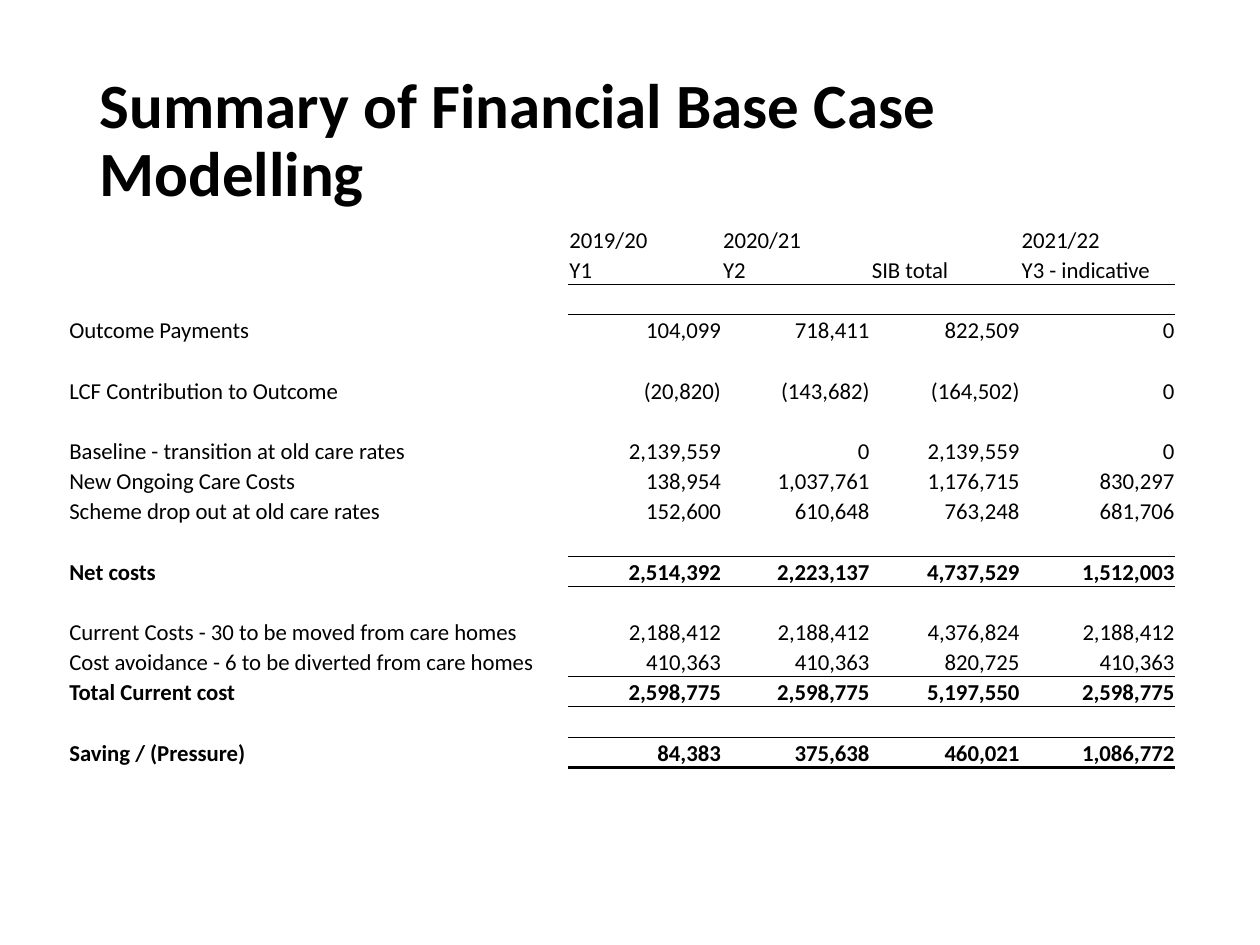
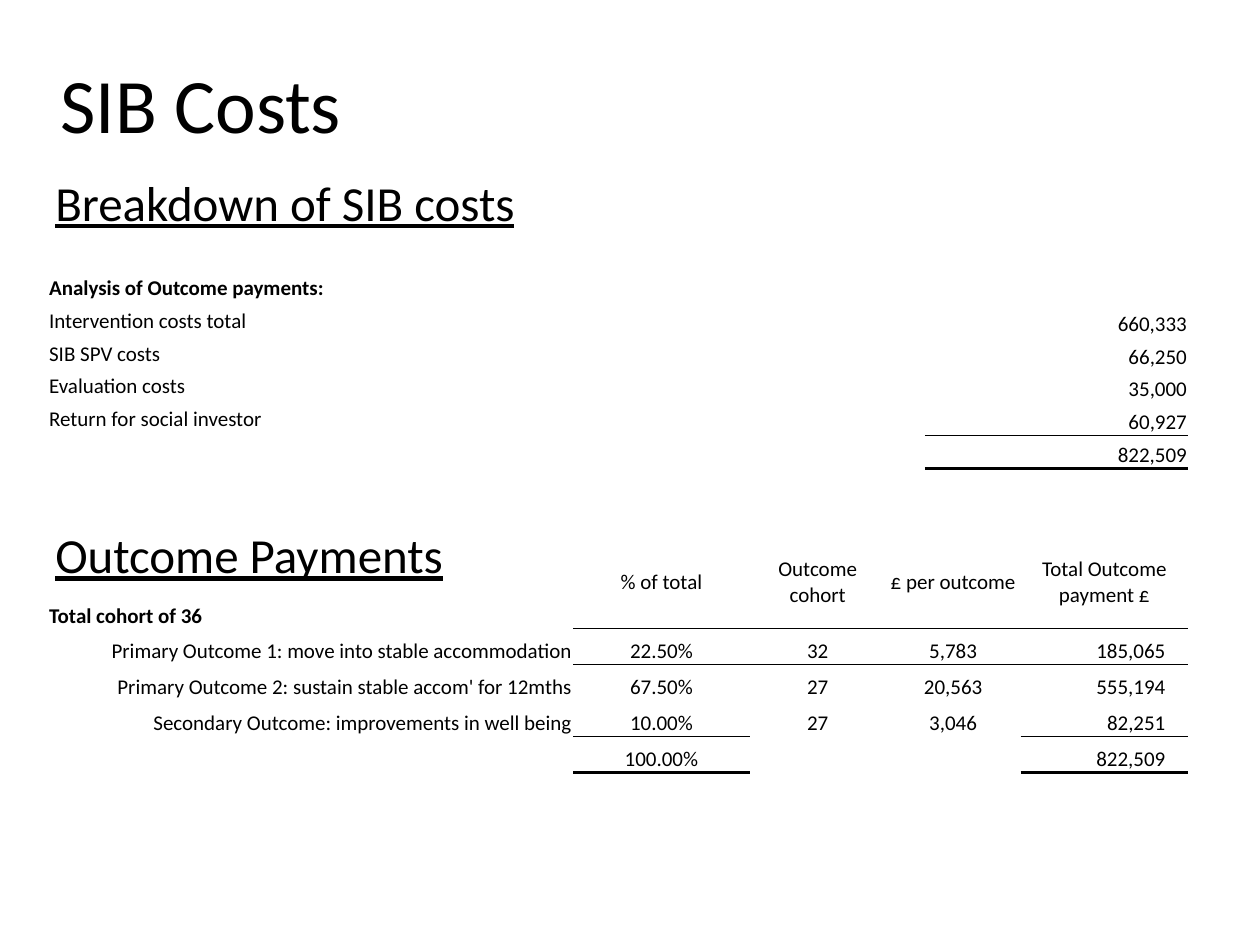
from lxml import etree
from pptx import Presentation
from pptx.dml.color import RGBColor
from pptx.enum.text import MSO_ANCHOR, MSO_AUTO_SIZE, PP_ALIGN
from pptx.oxml.ns import qn
from pptx.util import Inches, Pt

LEFT, CENTRE, RIGHT = PP_ALIGN.LEFT, PP_ALIGN.CENTER, PP_ALIGN.RIGHT
MIDDLE, BOTTOM = MSO_ANCHOR.MIDDLE, MSO_ANCHOR.BOTTOM
NO_AUTOFIT = MSO_AUTO_SIZE.NONE
TITLE_ONLY = 5

COLOURS = {"paper": "FFFFFF", "ink": "000000"}
FONT = "Calibri"
PLAIN_TABLE = "{2D5ABB26-0587-4C30-8999-92F81FD0307C}"
THIN, THICK = 0.5, 2
WIDTH, HEIGHT = Inches(10), Inches(7.5)
CELL = WIDTH / 100  # the slide is a grid of 100 columns by 75 rows

SUMMARY = [
    ["", "2019/20", "2020/21", "", "2021/22"],
    ["", "Y1", "Y2", "SIB total", "Y3 - indicative"],
    [],
    ["Outcome Payments", "104,099", "718,411", "822,509", "0"],
    [],
    ["LCF Contribution to Outcome", "(20,820)", "(143,682)", "(164,502)", "0"],
    [],
    ["Baseline - transition at old care rates", "2,139,559", "0", "2,139,559", "0"],
    ["New Ongoing Care Costs", "138,954", "1,037,761", "1,176,715", "830,297"],
    ["Scheme drop out at old care rates", "152,600", "610,648", "763,248", "681,706"],
    [],
    ["Net costs", "2,514,392", "2,223,137", "4,737,529", "1,512,003"],
    [],
    ["Current Costs - 30 to be moved from care homes",
     "2,188,412", "2,188,412", "4,376,824", "2,188,412"],
    ["Cost avoidance - 6 to be diverted from care homes",
     "410,363", "410,363", "820,725", "410,363"],
    ["Total Current cost", "2,598,775", "2,598,775", "5,197,550", "2,598,775"],
    [],
    ["Saving / (Pressure)", "84,383", "375,638", "460,021", "1,086,772"],
]
BREAKDOWN = [
    ["Analysis of Outcome payments:"],
    ["Intervention costs total", "660,333"],
    ["SIB SPV costs", "66,250"],
    ["Evaluation costs", "35,000"],
    ["Return for social investor", "60,927"],
    ["", "822,509"],
]
OUTCOMES = [
    ["Total cohort of 36", "% of total", "Outcome cohort", "£ per outcome",
     "Total Outcome payment £"],
    ["Primary Outcome 1: move into stable accommodation",
     "22.50%", "32", "5,783", "185,065"],
    ["Primary Outcome 2: sustain stable accom' for 12mths",
     "67.50%", "27", "20,563", "555,194"],
    ["Secondary Outcome: improvements in well being",
     "10.00%", "27", "3,046", "82,251"],
    ["", "100.00%", "", "", "822,509"],
]


def grid(*cells):
    """Turn grid columns or rows into slide lengths."""
    return [round(cell * CELL) for cell in cells]


def format_runs(para, size, bold=False, underline=False):
    for span in para.runs:
        span.font.name = FONT
        span.font.size = Pt(size)
        span.font.bold = bold
        span.font.underline = underline
        span.font.color.rgb = RGBColor.from_string(COLOURS["ink"])


def add_page(deck, title, place, size, bold=False):
    page = deck.slides.add_slide(deck.slide_layouts[TITLE_ONLY])
    page.background.fill.solid()
    page.background.fill.fore_color.rgb = RGBColor.from_string(COLOURS["paper"])
    box = page.shapes.title
    box.left, box.top, box.width, box.height = grid(*place)
    frame = box.text_frame
    frame.text = title
    frame.auto_size = NO_AUTOFIT
    frame.vertical_anchor = MIDDLE
    para = frame.paragraphs[0]
    para.alignment = LEFT
    para.line_spacing = 0.9
    format_runs(para, size, bold)
    return page


def add_headings(page, headings, place, gap):
    """Underlined section headings, parted by a gap in points."""
    frame = page.shapes.add_textbox(*grid(*place)).text_frame
    frame.word_wrap = True
    frame.text = "\n".join(headings)
    for index, para in enumerate(frame.paragraphs):
        para.line_spacing = 0.9
        if index:
            para.space_before = Pt(gap)
        format_runs(para, 28, underline=True)


def add_figures(page, rows, corner, widths, heights, size):
    """A table without grid lines: labels left, figures right."""
    place = grid(*corner, sum(widths), sum(heights))
    table = page.shapes.add_table(len(rows), len(widths), *place).table
    table.first_row = table.horz_banding = False
    table._tbl.tblPr.find(qn("a:tableStyleId")).text = PLAIN_TABLE
    for column, width in zip(table.columns, grid(*widths)):
        column.width = width
    for line, height in zip(table.rows, grid(*heights)):
        line.height = height
    for row, texts in enumerate(rows):
        for col in range(len(widths)):
            cell = table.cell(row, col)
            cell.fill.background()
            cell.margin_left = cell.margin_top = cell.margin_right = Inches(0.01)
            cell.margin_bottom = 0
            cell.text = texts[col] if col < len(texts) else ""
            para = cell.text_frame.paragraphs[0]
            format_runs(para, size)
            if not para.runs:  # keeps empty rows low
                para._p.get_or_add_endParaRPr().set("sz", str(size * 100))
    style_cells(table, range(len(rows)), [0], LEFT)
    style_cells(table, range(len(rows)), range(1, len(widths)), RIGHT)
    return table


def style_cells(table, rows, cols, align, anchor=BOTTOM):
    for row in rows:
        for col in cols:
            cell = table.cell(row, col)
            cell.vertical_anchor = anchor
            cell.text_frame.paragraphs[0].alignment = align


def embolden(table, rows, cols):
    for row in rows:
        for col in cols:
            for span in table.cell(row, col).text_frame.paragraphs[0].runs:
                span.font.bold = True


def add_border(cell, tag, weight):
    props = cell._tc.get_or_add_tcPr()
    line = etree.Element(qn(tag), w=str(Pt(weight)))
    fill = etree.SubElement(line, qn("a:solidFill"))
    etree.SubElement(fill, qn("a:srgbClr"), val=COLOURS["ink"])
    # The top border has to come before the bottom one
    props.insert(0 if tag == "a:lnT" else len(props.findall(qn("a:lnT"))), line)


def rule_under(table, row, cols, weight=THIN):
    for col in cols:
        add_border(table.cell(row, col), "a:lnB", weight)
        if row + 1 < len(table.rows):
            add_border(table.cell(row + 1, col), "a:lnT", weight)


def add_summary(deck):
    page = add_page(deck, "Summary of Financial Base Case Modelling",
                    (6.9, 4, 86.2, 14.5), 36, bold=True)
    count = len(SUMMARY)
    table = add_figures(page, SUMMARY, (5.4, 17.8), [39.7, 12.2, 11.8, 11.9, 12.3],
                        [43.1 / count] * count, 13)
    years = range(1, 5)
    style_cells(table, [0, 1], years, LEFT)
    embolden(table, [11, 15, 17], range(5))
    for row in (1, 10, 14, 16):
        rule_under(table, row, years)
    rule_under(table, count - 1, years, THICK)


def add_costs(deck):
    page = add_page(deck, "SIB Costs", (3.8, 3.6, 86.2, 10), 44)
    add_headings(page, ["Breakdown of SIB costs", "Outcome Payments"],
                 (3.4, 13.7, 86.2, 47.6), gap=171)

    # Breakdown of the costs
    count = len(BREAKDOWN)
    table = add_figures(page, BREAKDOWN, (3.8, 21.5), [69.6, 20.9],
                        [15.7 / count] * count, 12)
    style_cells(table, range(count), [0], LEFT, MIDDLE)
    embolden(table, [0], [0])
    rule_under(table, count - 2, [1])
    rule_under(table, count - 1, [1], THICK)

    # Payments for each outcome
    last = len(OUTCOMES) - 1
    table = add_figures(page, OUTCOMES, (3.8, 42.4), [41.7, 14, 10.8, 10.7, 13.3],
                        [7.5] + [11.4 / last] * last, 12)
    measures = range(1, 5)
    style_cells(table, [0], measures, CENTRE, MIDDLE)
    style_cells(table, range(1, last + 1), [0], RIGHT)
    style_cells(table, range(1, last + 1), [1, 2, 3], CENTRE)
    for row in range(1, last + 1):
        table.cell(row, 4).margin_right = Inches(0.18)
    embolden(table, [0], [0])
    rule_under(table, 0, measures)
    rule_under(table, last - 1, [1, 4])
    rule_under(table, last, [1, 4], THICK)


def main():
    deck = Presentation()
    deck.slide_width, deck.slide_height = WIDTH, HEIGHT
    add_summary(deck)
    add_costs(deck)
    deck.save("out.pptx")


if __name__ == "__main__":
    main()
